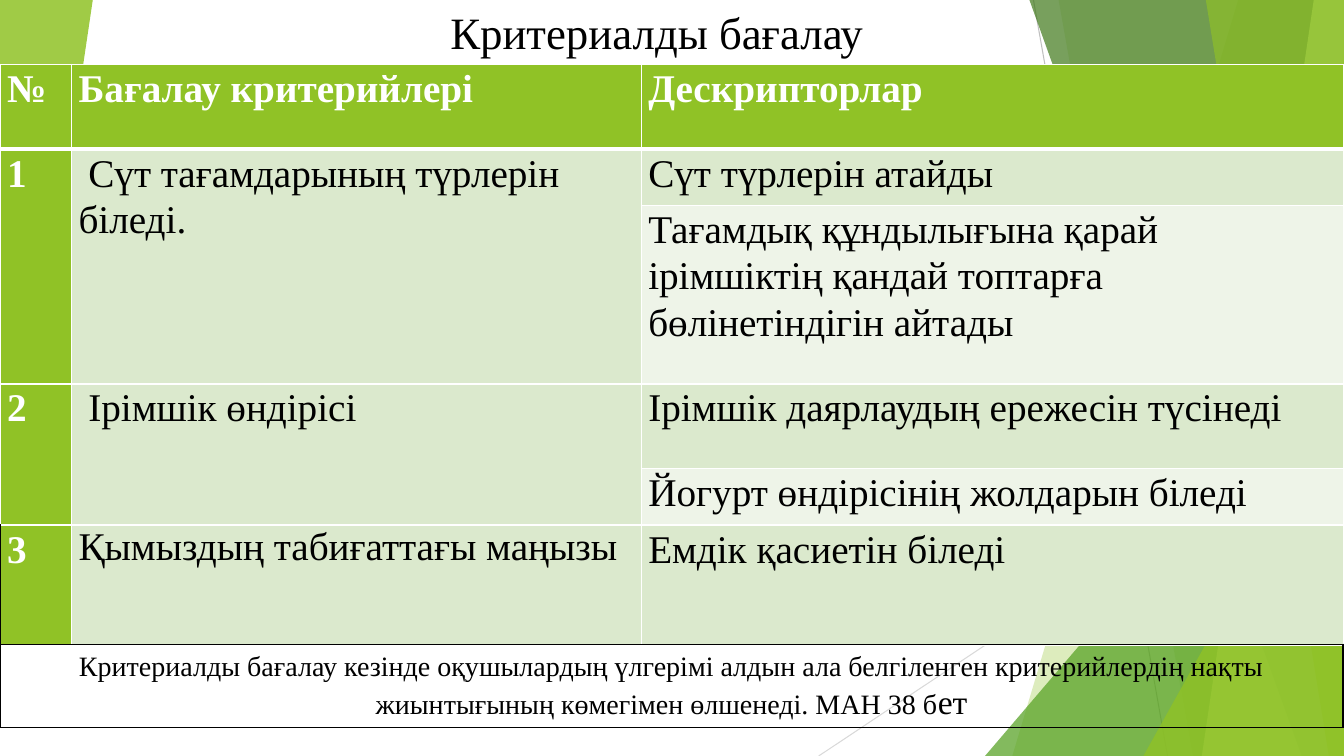
from lxml.etree import SubElement
from pptx import Presentation
from pptx.dml.color import RGBColor
from pptx.enum.shapes import MSO_CONNECTOR, MSO_SHAPE
from pptx.enum.text import PP_ALIGN
from pptx.oxml import parse_xml
from pptx.oxml.ns import nsdecls, qn
from pptx.util import Inches, Pt

FONT = "Times New Roman"
BLACK = RGBColor(0x00, 0x00, 0x00)
WHITE = RGBColor(0xFF, 0xFF, 0xFF)
GREY = RGBColor(0xBF, 0xBF, 0xBF)
LIGHT_GREY = RGBColor(0xD9, 0xD9, 0xD9)
LIME = RGBColor(0x90, 0xC2, 0x26)
GREEN = RGBColor(0x54, 0xA0, 0x21)
DARK_GREEN = RGBColor(0x3F, 0x78, 0x19)
PALE_LIME = RGBColor(0xC0, 0xE4, 0x74)
BAND_DARK = RGBColor(0xDB, 0xE9, 0xCD)
BAND_LIGHT = RGBColor(0xEE, 0xF4, 0xE8)

WIDTH, HEIGHT = 13.33, 7.5

# Top-left x, bottom-left x, colour, opacity; all reach the right edge
BANDS_BACK = [(12.28, 10.04, LIME, 30), (10.5, 11.83, LIME, 20)]
BANDS_FRONT = [(10.21, 12.91, DARK_GREEN, 70), (13.03, 11.92, PALE_LIME, 70),
               (11.96, 13.18, LIME, 65)]

COLUMNS = [0.71, 5.65, 6.97]
ROWS = [0.84, 0.56, 1.77, 0.84, 0.56, 1.19]
CRITERIA = [
    ("№", "Бағалау критерийлері", "Дескрипторлар"),
    ("1", " Сүт тағамдарының түрлерін біледі.", "Сүт түрлерін атайды"),
    ("", "", "Тағамдық құндылығына қарай ірімшіктің қандай топтарға бөлінетіндігін айтады"),
    ("2", " Ірімшік өндірісі", "Ірімшік даярлаудың ережесін түсінеді"),
    ("", "", "Йогурт өндірісінің жолдарын біледі"),
    ("3", "Қымыздың табиғаттағы маңызы", "Емдік қасиетін біледі"),
]


def paint(sp, color, opacity):
    sp.shadow.inherit = False
    sp.line.fill.background()
    sp.fill.solid()
    sp.fill.fore_color.rgb = color
    clr = sp.fill._xPr.find(qn("a:solidFill"))[0]
    SubElement(clr, qn("a:alpha"), val=str(opacity * 1000))


def add_line(s, x1, y1, x2, y2, color):
    line = s.shapes.add_connector(MSO_CONNECTOR.STRAIGHT, Inches(x1), Inches(y1),
                                  Inches(x2), Inches(y2))
    line.line.color.rgb = color
    line.line.width = Pt(0.75)
    SubElement(line._element.spPr, qn("a:effectLst"))


def add_band(s, top_x, bottom_x, color, opacity):
    corners = [(top_x, 0), (WIDTH, 0), (WIDTH, HEIGHT), (bottom_x, HEIGHT)]
    points = [(Inches(x), Inches(y)) for x, y in corners]
    builder = s.shapes.build_freeform(*points[0], scale=1.0)
    builder.add_line_segments(points[1:], close=True)
    paint(builder.convert_to_shape(), color, opacity)


def add_triangle(s, x, y, w, h, color, opacity, rotation=0):
    sp = s.shapes.add_shape(MSO_SHAPE.ISOSCELES_TRIANGLE, Inches(x), Inches(y),
                            Inches(w), Inches(h))
    sp.adjustments[0] = 1
    sp.rotation = rotation
    paint(sp, color, opacity)


def set_borders(cell, color, **special):
    """Draw four 1 pt borders; special maps a side to its (colour, width)."""
    tcPr = cell._tc.get_or_add_tcPr()
    for i, side in enumerate("LRTB"):
        c, width = special.get(side, (color, 1))
        tcPr.insert(i, parse_xml(
            f'<a:ln{side} {nsdecls("a")} w="{Pt(width)}"><a:solidFill>'
            f'<a:srgbClr val="{c}"/></a:solidFill></a:ln{side}>'))


def add_table(s, x, y, columns, rows):
    frame = s.shapes.add_table(len(rows), len(columns), Inches(x), Inches(y),
                               Inches(sum(columns)), Inches(sum(rows)))
    table = frame.table
    table.first_row = table.horz_banding = False
    for column, width in zip(table.columns, columns):
        column.width = Inches(width)
    for row, height in zip(table.rows, rows):
        row.height = Inches(height)
    return table


def style_paragraph(p, size, color, bold=False, spacing=1.07, after=8):
    p.font.name = FONT
    p.font.size = Pt(size)
    p.font.bold = bold
    p.font.color.rgb = color
    p.line_spacing = spacing
    p.space_after = Pt(after)


def add_criteria_table(s):
    table = add_table(s, 0, 0.64, COLUMNS, ROWS)
    last = len(ROWS) - 1
    for i, texts in enumerate(CRITERIA):
        for j, text in enumerate(texts):
            cell = table.cell(i, j)
            accent = i == 0 or j == 0
            light = j == 2 and not CRITERIA[i][0]
            cell.fill.solid()
            cell.fill.fore_color.rgb = LIME if accent else BAND_LIGHT if light else BAND_DARK
            cell.margin_left = cell.margin_right = Inches(0.07)
            cell.margin_top = cell.margin_bottom = 0
            special = {}
            if i == 0:
                special["B"] = (WHITE, 3)
            elif i == 1:
                special["T"] = (WHITE, 3)
            elif i == last and j == 0:
                special["L"] = (BLACK, 1)
            set_borders(cell, WHITE, **special)
            if text:
                p = cell.text_frame.paragraphs[0]
                p.text = text
                plain = i == last and j == 1
                style_paragraph(p, 28, WHITE if accent else BLACK, accent,
                                1.0 if plain else 1.07, 0 if plain else 8)
    # Each of the first two criteria spans two descriptors
    for i in (1, 3):
        for j in (0, 1):
            table.cell(i, j).merge(table.cell(i + 1, j))


def add_note_table(s):
    cell = add_table(s, 0, 6.39, [13.32], [0.82]).cell(0, 0)
    cell.fill.background()
    set_borders(cell, BLACK)
    p = cell.text_frame.paragraphs[0]
    p.alignment = PP_ALIGN.CENTER
    style_paragraph(p, 20, BLACK)
    p.add_run().text = ("Критериалды бағалау кезінде оқушылардың үлгерімі алдын ала "
                        "белгіленген критерийлердің нақты жиынтығының көмегімен "
                        "өлшенеді. МАН 38 б")
    r = p.add_run()
    r.text = "ет"
    r.font.size = Pt(24)


def add_title(s, text):
    box = s.shapes.add_textbox(Inches(2.7), 0, Inches(7.63), Inches(0.64))
    tf = box.text_frame
    tf.word_wrap = True
    p = tf.paragraphs[0]
    p.text = text
    p.alignment = PP_ALIGN.CENTER
    style_paragraph(p, 32, BLACK, spacing=1.0, after=0)


def main():
    prs = Presentation()
    prs.slide_width, prs.slide_height = Inches(WIDTH), Inches(HEIGHT)
    s = prs.slides.add_slide(prs.slide_layouts[6])

    # Green facets, back to front
    add_line(s, 10.25, 0, 11.58, HEIGHT, GREY)
    add_line(s, WIDTH, 4.03, 8.12, HEIGHT, LIGHT_GREY)
    for band in BANDS_BACK:
        add_band(s, *band)
    add_triangle(s, 9.77, 3.33, 3.56, 4.17, GREEN, 72)
    for band in BANDS_FRONT:
        add_band(s, *band)
    add_triangle(s, 11.34, 3.93, 1.99, 3.57, LIME, 80)
    add_triangle(s, 0, 0, 0.92, 6.2, LIME, 85, rotation=180)

    # Content
    add_criteria_table(s)
    add_note_table(s)
    add_title(s, "Критериалды бағалау")
    prs.save("out.pptx")


if __name__ == "__main__":
    main()
